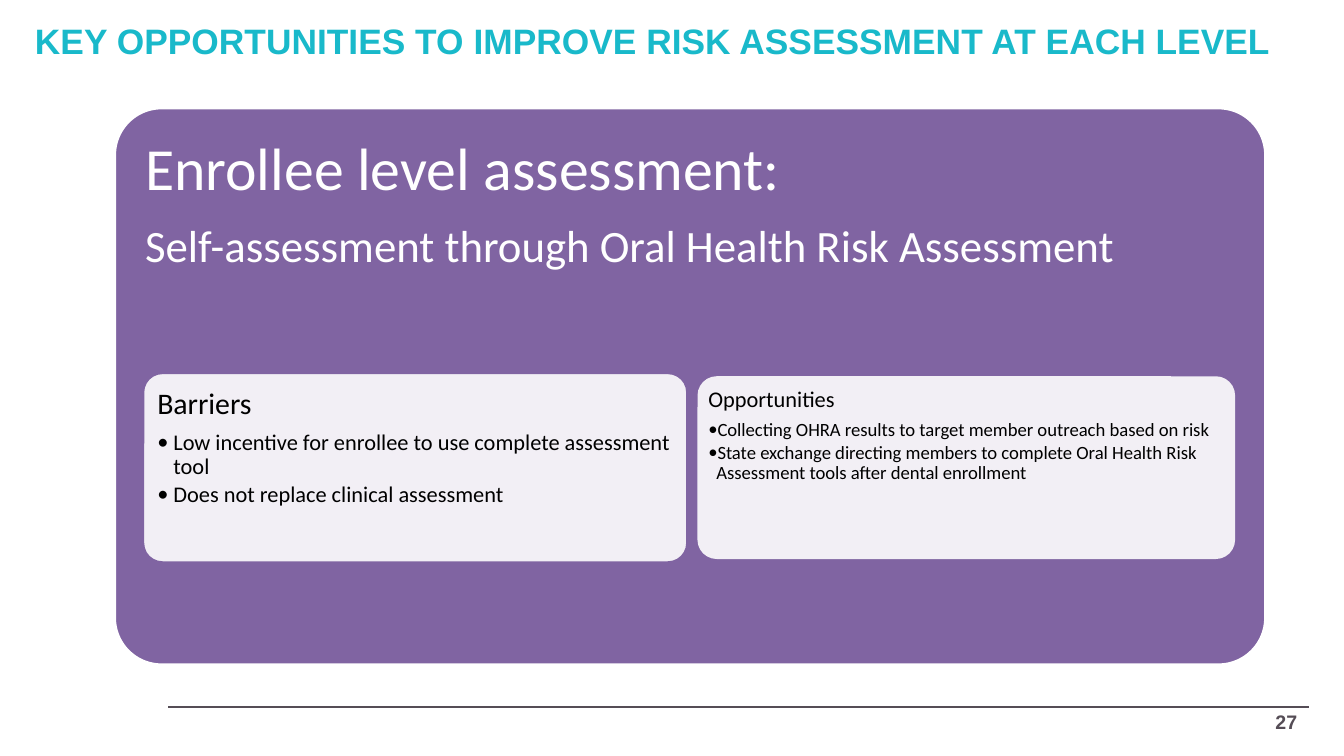
from lxml.etree import SubElement
from pptx import Presentation
from pptx.dml.color import RGBColor
from pptx.enum.shapes import MSO_CONNECTOR, MSO_SHAPE
from pptx.enum.text import MSO_ANCHOR, PP_ALIGN
from pptx.oxml.ns import qn
from pptx.util import Inches, Pt

PURPLE, WHITE, BLACK, TEAL, GRAY = "8064A2", "FFFFFF", "000000", "19B9CA", "554D56"


def color(code):
    return RGBColor.from_string(code)


def write(para, text, size, hue, font="Calibri", bold=False, align=PP_ALIGN.LEFT,
          line=1, after=0, indent=0):
    if indent:
        para.level = 1
        props = para._p.get_or_add_pPr()
        props.set("marL", str(Inches(indent)))
        props.set("indent", str(-Inches(indent)))
        SubElement(props, qn("a:buFont")).set("typeface", font)
        SubElement(props, qn("a:buChar")).set("char", "•")
    para.alignment = align
    para.line_spacing = line
    para.space_before = Pt(0)
    para.space_after = Pt(after * size)
    run = para.add_run()
    run.text = text
    run.font.name = font
    run.font.size = Pt(size)
    run.font.bold = bold
    run.font.color.rgb = color(hue)


def setup(frame, inset, anchor=MSO_ANCHOR.TOP):
    frame.word_wrap = True
    frame.vertical_anchor = anchor
    frame.margin_left = frame.margin_right = Inches(inset)
    frame.margin_top = frame.margin_bottom = Inches(inset)
    return frame


def textbox(slide, box, inset, anchor=MSO_ANCHOR.TOP):
    shape = slide.shapes.add_textbox(*map(Inches, box))
    return setup(shape.text_frame, inset, anchor)


def card(slide, box, fill, round, edge=None, alpha=None):
    shape = slide.shapes.add_shape(MSO_SHAPE.ROUNDED_RECTANGLE, *map(Inches, box))
    shape.adjustments[0] = round
    shape.shadow.inherit = False
    shape.fill.solid()
    shape.fill.fore_color.rgb = color(fill)
    if alpha:
        tint = shape._element.spPr.find(qn("a:solidFill"))[0]
        SubElement(tint, qn("a:alpha")).set("val", str(alpha * 1000))
    if edge:
        shape.line.color.rgb = color(edge)
        shape.line.width = Pt(2)
    else:
        shape.line.fill.background()


def header(slide, box, text):
    title = slide.shapes.title
    title.left, title.top, title.width, title.height = map(Inches, box)
    frame = setup(title.text_frame, 0.1)
    frame.margin_top = frame.margin_bottom = Inches(0.05)
    write(frame.paragraphs[0], text, 18.9, TEAL, font="Arial", bold=True)


def level(slide, box, head, detail):
    left, top, width, height = box
    card(slide, box, PURPLE, 0.085, edge=WHITE)
    frame = textbox(slide, (left + 0.1, top + 0.1, width - 0.2, height - 0.2), 0.13)
    write(frame.paragraphs[0], head, 32, WHITE, line=0.9, after=0.35)
    write(frame.add_paragraph(), detail, 24, WHITE, line=0.9, after=0.35)


def panel(slide, box, head, items, sizes, inset, indent, edge=None):
    left, top, width, height = box
    card(slide, box, WHITE, 0.105, edge=edge, alpha=90)
    frame = textbox(slide, (left + 0.04, top + 0.05, width - 0.08, height - 0.1), inset)
    write(frame.paragraphs[0], head, sizes[0], BLACK, line=0.9, after=0.35)
    for item in items:
        write(frame.add_paragraph(), item, sizes[1], BLACK, line=0.9, after=0.15,
              indent=indent)


def footer(slide, box, number):
    left, top, width, height = box
    rule = slide.shapes.add_connector(
        MSO_CONNECTOR.STRAIGHT, Inches(left), Inches(top + 0.04),
        Inches(left + width), Inches(top + 0.04))
    rule.line.color.rgb = color(GRAY)
    rule.line.width = Pt(0.75)
    SubElement(rule._element.spPr, qn("a:effectLst"))
    frame = textbox(slide, (left + width - 0.79, top, 0.8, height), 0.1, MSO_ANCHOR.MIDDLE)
    frame.margin_top = frame.margin_bottom = Inches(0.05)
    write(frame.paragraphs[0], number, 10.5, GRAY, font="Arial", bold=True,
          align=PP_ALIGN.RIGHT)


def main():
    deck = Presentation()
    deck.slide_width = Inches(10)
    deck.slide_height = deck.slide_width * 9 // 16
    slide = deck.slides.add_slide(deck.slide_layouts[5])
    header(slide, (0.16, 0.09, 9.5, 0.69),
           "KEY OPPORTUNITIES TO IMPROVE RISK ASSESSMENT AT EACH LEVEL")
    level(slide, (0.85, 0.8, 8.57, 4.15), "Enrollee level assessment:",
          "Self-assessment through Oral Health Risk Assessment")
    panel(slide, (1.06, 2.77, 4.06, 1.42), "Barriers",
          ["Low incentive for enrollee to use complete assessment tool",
           "Does not replace clinical assessment"],
          (16, 12), 0.07, 0.12, edge=PURPLE)
    panel(slide, (5.19, 2.8, 4, 1.36), "Opportunities",
          ["Collecting OHRA results to target member outreach based on risk",
           "State exchange directing members to complete Oral Health Risk "
           "Assessment tools after dental enrollment"],
          (12, 10), 0.04, 0.06)
    footer(slide, (1.25, 5.22, 8.49, 0.3), "27")
    deck.save("out.pptx")


if __name__ == "__main__":
    main()
